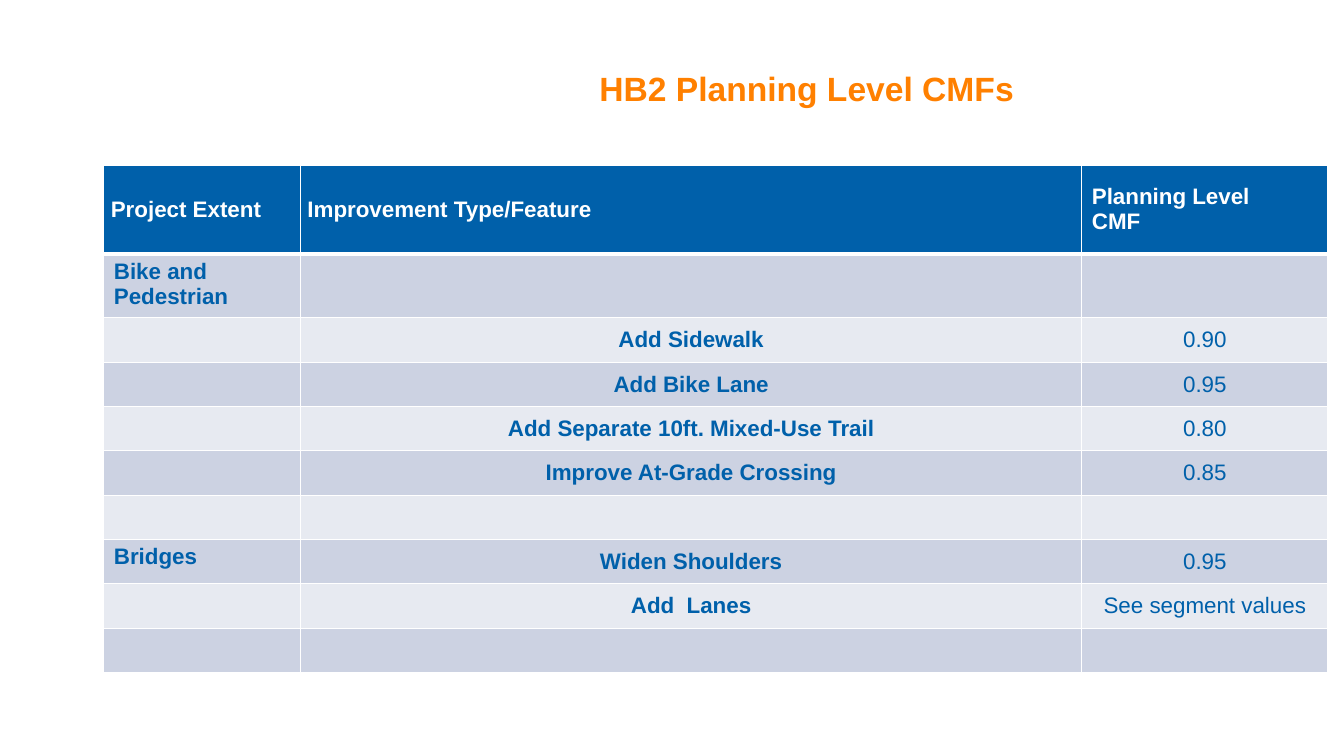
from lxml import etree
from pptx import Presentation
from pptx.dml.color import RGBColor
from pptx.enum.text import MSO_ANCHOR, PP_ALIGN
from pptx.oxml.ns import qn
from pptx.util import Inches, Pt

LEFT, CENTER = PP_ALIGN.LEFT, PP_ALIGN.CENTER
TOP, MIDDLE = MSO_ANCHOR.TOP, MSO_ANCHOR.MIDDLE

THEME = {
    "font": "Arial",
    "title_size": 24,
    "table_size": 16,
    "orange": "FF8000",
    "blue": "0060AA",
    "white": "FFFFFF",
    "bands": ["E7EAF1", "CCD2E2"],
}

COLUMN_WIDTHS = [1.95, 7.75, 2.44]
ROW_HEIGHTS = [0.88, 0.59] + [0.44] * 8
ROWS = [
    ["Project Extent", "Improvement Type/Feature", "Planning Level\nCMF"],
    ["Bike and Pedestrian", "", ""],
    ["", "Add Sidewalk", "0.90"],
    ["", "Add Bike Lane", "0.95"],
    ["", "Add Separate 10ft. Mixed-Use Trail", "0.80"],
    ["", "Improve At-Grade Crossing", "0.85"],
    ["", "", ""],
    ["Bridges", "Widen Shoulders", "0.95"],
    ["", "Add  Lanes", "See segment values"],
    ["", "", ""],
]


def style_text(frame, size, color, bold, align):
    for para in frame.paragraphs:
        para.alignment = align
        values = {"name": THEME["font"], "size": Pt(size), "bold": bold}
        for name, value in values.items():
            setattr(para.font, name, value)
        para.font.color.rgb = RGBColor.from_string(color)


def add_border(cell, side, width):
    line = etree.SubElement(cell._tc.get_or_add_tcPr(), qn(f"a:ln{side}"), w=str(Pt(width)))
    fill = etree.SubElement(line, qn("a:solidFill"))
    etree.SubElement(fill, qn("a:srgbClr"), val=THEME["white"])


deck = Presentation()
deck.slide_width = Inches(13.33)
deck.slide_height = Inches(7.5)
page = deck.slides.add_slide(deck.slide_layouts[6])

title = page.shapes.add_textbox(Inches(3.11), Inches(0.25), Inches(9.78), Inches(1.25))
title_frame = title.text_frame
title_frame.word_wrap = True
title_frame.vertical_anchor = MIDDLE
title_frame.text = "HB2 Planning Level CMFs"
style_text(title_frame, THEME["title_size"], THEME["orange"], True, CENTER)

table = page.shapes.add_table(
    len(ROWS), len(COLUMN_WIDTHS), Inches(1.03), Inches(1.64),
    Inches(sum(COLUMN_WIDTHS)), Inches(sum(ROW_HEIGHTS)),
).table
for column, width in zip(table.columns, COLUMN_WIDTHS):
    column.width = Inches(width)

for row_index, (labels, height) in enumerate(zip(ROWS, ROW_HEIGHTS)):
    table.rows[row_index].height = Inches(height)
    header = row_index == 0
    for column_index, label in enumerate(labels):
        cell = table.cell(row_index, column_index)
        cell.text = label
        extent = column_index == 0 and not header
        value = column_index == 2 and not header
        if header:
            left = 0.1 if column_index == 2 else 0.07
        else:
            left = 0.1 if extent else 0
        layout = {
            "margin_left": Inches(left),
            "margin_right": Inches(0.1 if extent else 0),
            "margin_top": Inches(0.05 if extent else 0),
            "margin_bottom": Inches(0.05 if extent else 0),
            "vertical_anchor": TOP if extent else MIDDLE,
        }
        for name, setting in layout.items():
            setattr(cell, name, setting)
        for side in "LRTB":
            thick = (header and side == "B") or (row_index == 1 and side == "T")
            add_border(cell, side, 3 if thick else 1)
        cell.fill.solid()
        band = THEME["blue"] if header else THEME["bands"][row_index % 2]
        cell.fill.fore_color.rgb = RGBColor.from_string(band)
        style_text(
            cell.text_frame, THEME["table_size"],
            THEME["white"] if header else THEME["blue"],
            not value, LEFT if header or extent else CENTER,
        )

deck.save("out.pptx")
